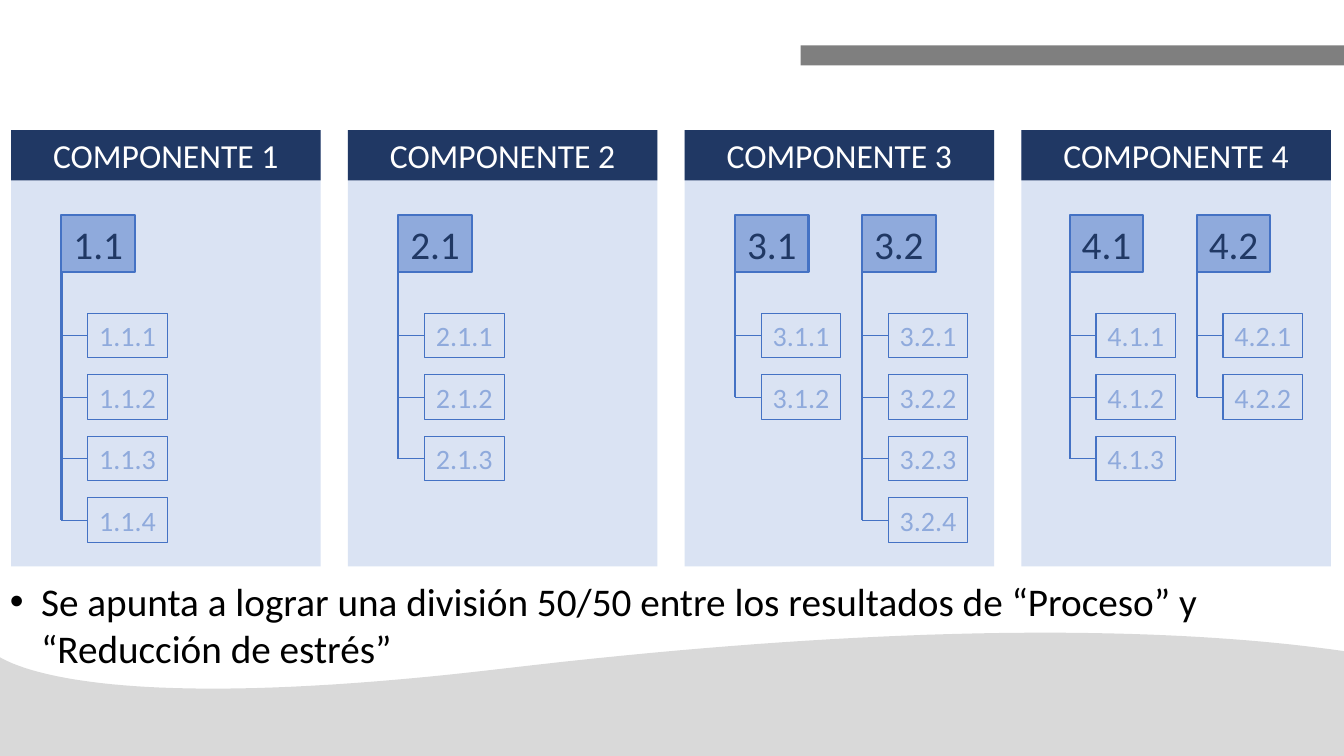
from lxml import etree
from pptx import Presentation
from pptx.dml.color import RGBColor
from pptx.enum.shapes import MSO_CONNECTOR, MSO_SHAPE
from pptx.enum.text import MSO_ANCHOR, PP_ALIGN
from pptx.oxml.ns import qn
from pptx.util import Inches, Pt

COLORS = {
    "wave": "D9D9D9", "bar": "7F7F7F", "panel": "DAE3F3", "navy": "203864",
    "soft": "8FAADC", "line": "4472C4", "white": "FFFFFF", "black": "000000",
}
RGB = {name: RGBColor.from_string(value) for name, value in COLORS.items()}

prs = Presentation()
prs.slide_width, prs.slide_height = Inches(13.33), Inches(7.5)
slide = prs.slides.add_slide(prs.slide_layouts[6])
shapes = slide.shapes


def add_box(left, top, width, height, fill=None, line_width=0, text="", size=20, color="soft"):
    box = shapes.add_shape(MSO_SHAPE.RECTANGLE, Inches(left), Inches(top),
                           Inches(width), Inches(height))
    box.shadow.inherit = False
    if fill:
        box.fill.solid()
        box.fill.fore_color.rgb = RGB[fill]
    else:
        box.fill.background()
    if line_width:
        box.line.color.rgb = RGB["line"]
        box.line.width = Pt(line_width)
    else:
        box.line.fill.background()
    if text:
        frame = box.text_frame
        frame.word_wrap = False
        frame.vertical_anchor = MSO_ANCHOR.MIDDLE
        label = frame.paragraphs[0]
        label.text = text
        label.alignment = PP_ALIGN.CENTER
        for name, value in {"name": "Calibri", "size": Pt(size)}.items():
            setattr(label.font, name, value)
        label.font.color.rgb = RGB[color]


def add_branch(x1, y1, x2, y2, width):
    branch = shapes.add_connector(MSO_CONNECTOR.STRAIGHT, Inches(x1), Inches(y1),
                                  Inches(x2), Inches(y2))
    branch.line.color.rgb = RGB["line"]
    branch.line.width = Pt(width)
    etree.SubElement(branch._element.spPr, qn("a:effectLst"))


# Wave at the foot, two cubic curves drawn as short steps
CURVES = [
    [(13.33, 6.46), (11.65, 6.22), (9.02, 6.16), (5.02, 6.63)],
    [(5.02, 6.63), (1.33, 7.07), (0.26, 6.68), (-0.02, 6.51)],
]
STEPS = 40
crest = [(13.33, 6.46)]
for curve in CURVES:
    for step in range(1, STEPS + 1):
        t = step / STEPS
        weights = ((1 - t) ** 3, 3 * t * (1 - t) ** 2, 3 * t ** 2 * (1 - t), t ** 3)
        crest.append(tuple(sum(w * point[axis] for w, point in zip(weights, curve))
                           for axis in (0, 1)))
outline = shapes.build_freeform(Inches(13.33), Inches(7.5))
outline.add_line_segments([(Inches(x), Inches(y)) for x, y in crest + [(-0.02, 7.5)]])
wave = outline.convert_to_shape()
wave.shadow.inherit = False
wave.fill.solid()
wave.fill.fore_color.rgb = RGB["wave"]
wave.line.fill.background()

add_box(7.94, 0.45, 5.39, 0.2, "bar")

# Component panels
for index in range(4):
    left = 0.11 + 3.34 * index
    add_box(left, 1.29, 3.07, 4.33, "panel")
    add_box(left, 1.29, 3.07, 0.5, "navy", text=f"COMPONENTE {index + 1}",
            size=24, color="white")

# Results: number, left edge, count of sub-results
RESULTS = [
    ("1.1", 0.61, 4), ("2.1", 3.95, 3), ("3.1", 7.29, 2),
    ("3.2", 8.55, 4), ("4.1", 10.61, 3), ("4.2", 11.87, 2),
]
for number, left, count in RESULTS:
    add_box(left, 2.13, 0.73, 0.57, "soft", 1.5, number, 28, "navy")
    for row in range(count):
        top = 3.11 + 0.61 * row
        middle = top + 0.22
        add_box(left + 0.26, top, 0.79, 0.44, None, 0.75, f"{number}.{row + 1}")
        add_branch(left, middle, left + 0.26, middle, 0.75)
    add_branch(left, 2.7, left, middle, 1.5)

# Closing statement
statement = shapes.add_textbox(0, Inches(5.68), Inches(13.33), Inches(1.73)).text_frame
statement.word_wrap = True
goal = statement.paragraphs[0]
goal.text = ("Se apunta a lograr una división 50/50 entre los resultados de "
             "“Proceso” y “Reducción de estrés”")
props = goal._p.get_or_add_pPr()
props.set("marL", str(Inches(0.31)))
props.set("indent", str(-Inches(0.31)))
etree.SubElement(props, qn("a:buFont"), typeface="Arial")
etree.SubElement(props, qn("a:buChar"), char="•")
for name, value in {"name": "Calibri", "size": Pt(28)}.items():
    setattr(goal.font, name, value)
goal.font.color.rgb = RGB["black"]

prs.save("out.pptx")
